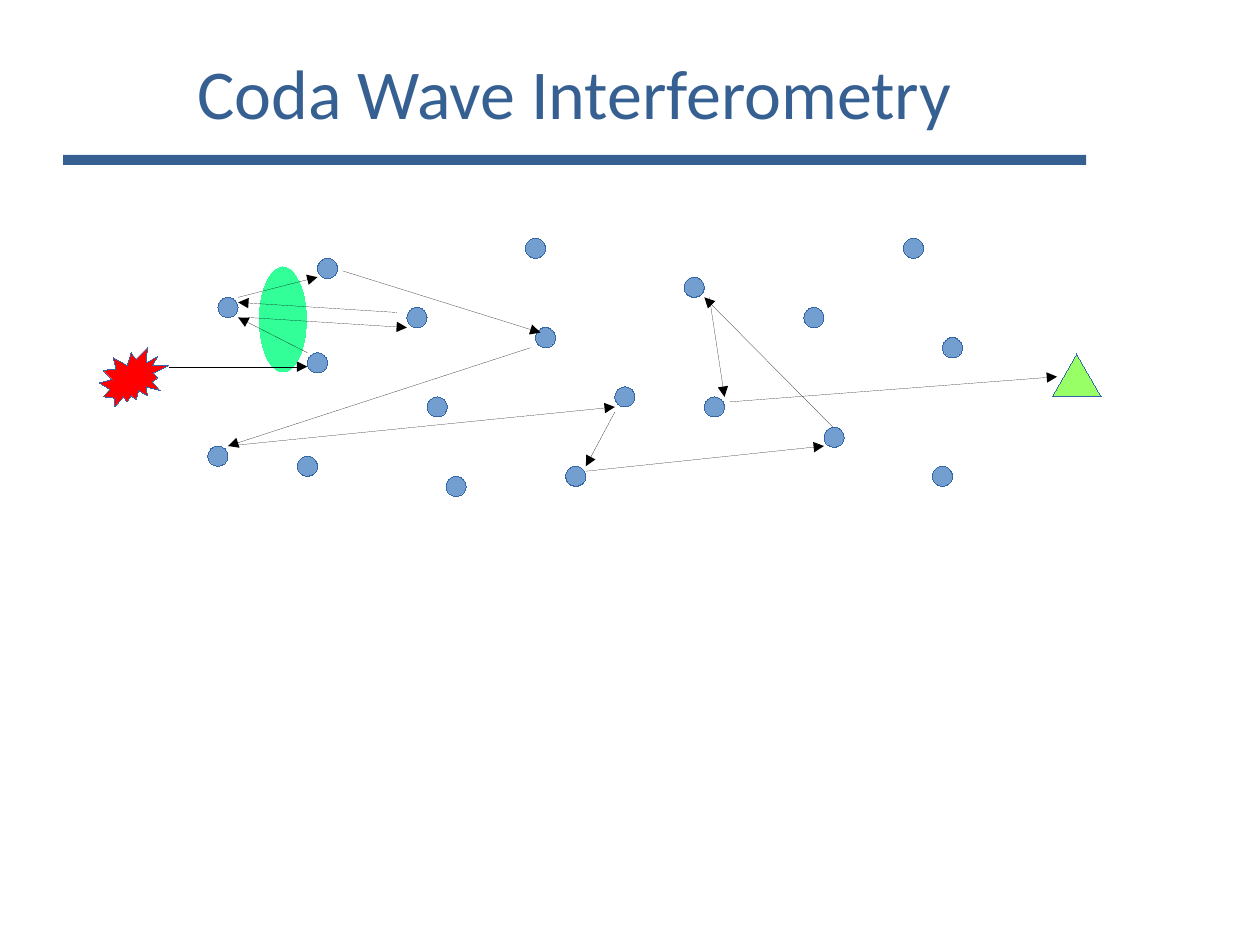
from dataclasses import dataclass

from lxml.etree import SubElement
from pptx import Presentation
from pptx.dml.color import RGBColor
from pptx.enum.shapes import MSO_CONNECTOR, MSO_SHAPE
from pptx.enum.text import MSO_ANCHOR, PP_ALIGN
from pptx.oxml.ns import qn
from pptx.util import Inches, Pt


@dataclass(frozen=True)
class Theme:
    """Colours, font and type size of the slide."""
    heading: RGBColor = RGBColor(0x37, 0x60, 0x92)
    scatterer: RGBColor = RGBColor(0x72, 0x9F, 0xCF)
    outline: RGBColor = RGBColor(0x34, 0x65, 0xA4)
    region: RGBColor = RGBColor(0x33, 0xFF, 0x99)
    source: RGBColor = RGBColor(0xFF, 0x00, 0x00)
    receiver: RGBColor = RGBColor(0x99, 0xFF, 0x66)
    ray: RGBColor = RGBColor(0x00, 0x00, 0x00)
    white: RGBColor = RGBColor(0xFF, 0xFF, 0xFF)
    font: str = "Calibri"
    title_size: Pt = Pt(40)


THEME = Theme()
DOT_SIZE = 0.16

SCATTERERS = [
    (0.86, 1.65), (6.69, 0.79), (5.75, 1.5), (5.59, 0.55), (4.8, 1.26),
    (4.64, 0.31), (3.46, 0.71), (2.6, 1.26), (3.7, 1.81), (2.44, 0.55),
    (1.57, 1.73), (0.94, 0.47), (1.65, 0.91), (1.73, 0.16), (6.61, 1.81),
    (6.38, 0), (2.75, 1.89), (3.38, 0), (4.09, 1.18),
]

RAYS = [
    ((0.55, 1.02), (1.65, 1.02)), ((2.36, 0.59), (1.1, 0.51)),
    ((1.65, 0.91), (1.1, 0.63)), ((1.18, 0.63), (2.44, 0.71)),
    ((1.1, 0.47), (1.73, 0.31)), ((1.93, 0.26), (3.5, 0.75)),
    ((3.42, 0.87), (1.02, 1.65)), ((4.09, 1.38), (3.86, 1.81)),
    ((1.02, 1.65), (4.09, 1.34)), ((3.86, 1.85), (5.75, 1.65)),
    ((5.82, 1.5), (4.8, 0.47)), ((4.84, 0.47), (4.96, 1.26)),
    ((5, 1.3), (7.6, 1.1)),
]

BURST = [
    (0.29, 0.96), (0.25, 0.91), (0.22, 1.01), (0.11, 0.95), (0.13, 1.04),
    (0.03, 1.05), (0.1, 1.12), (0, 1.15), (0.08, 1.2), (0.03, 1.26),
    (0.12, 1.27), (0.12, 1.34), (0.19, 1.26), (0.22, 1.3), (0.25, 1.25),
    (0.29, 1.28), (0.31, 1.21), (0.38, 1.25), (0.37, 1.18), (0.48, 1.21),
    (0.42, 1.14), (0.46, 1.11), (0.43, 1.07), (0.55, 1.01), (0.42, 1.01),
    (0.46, 0.94), (0.37, 0.99), (0.38, 0.87),
]


def remove_style(shape):
    """Drop the theme style, so that lines keep the default width."""
    style = shape._element.find(qn("p:style"))
    if style is not None:
        shape._element.remove(style)


def paint(shape, fill, outline=None):
    """Give a shape a flat fill and an optional outline."""
    remove_style(shape)
    shape.shadow.inherit = False
    shape.fill.solid()
    shape.fill.fore_color.rgb = fill
    if outline is None:
        shape.line.fill.background()
    else:
        shape.line.color.rgb = outline


def add_preset(page, kind, left, top, width, height, fill, outline=None):
    """Add a painted preset shape, measured in inches."""
    shape = page.shapes.add_shape(
        kind, Inches(left), Inches(top), Inches(width), Inches(height))
    paint(shape, fill, outline)


def add_ray(page, start, end):
    """Add a thin arrow between two points in inches."""
    ray = page.shapes.add_connector(
        MSO_CONNECTOR.STRAIGHT, *(Inches(value) for value in (*start, *end)))
    remove_style(ray)
    ray.line.color.rgb = THEME.ray
    SubElement(ray.line._get_or_add_ln(), qn("a:tailEnd"), type="triangle")
    SubElement(ray._element.spPr, qn("a:effectLst"))


def add_header(page, left, top, width, height):
    """Place the centred title with the rule at the foot of its box."""
    rule_height = 0.08
    add_preset(page, MSO_SHAPE.RECTANGLE, left, top + height - rule_height,
               width, rule_height, THEME.heading)
    box = page.shapes.add_textbox(
        Inches(left), Inches(top), Inches(width), Inches(0.85))
    frame = box.text_frame
    frame.word_wrap = True
    frame.vertical_anchor = MSO_ANCHOR.MIDDLE
    para = frame.paragraphs[0]
    para.alignment = PP_ALIGN.CENTER
    span = para.add_run()
    span.text = "Coda Wave Interferometry"
    span.font.name = THEME.font
    span.font.size = THEME.title_size
    span.font.color.rgb = THEME.heading


def add_scattering_field(page, left, top):
    """Place the changed region, scatterers, source, receiver and ray path."""
    def place(point):
        return left + point[0], top + point[1]

    add_preset(page, MSO_SHAPE.OVAL, *place((1.26, 0.22)), 0.39, 0.85,
               THEME.region, THEME.white)
    for point in SCATTERERS:
        add_preset(page, MSO_SHAPE.OVAL, *place(point), DOT_SIZE, DOT_SIZE,
                   THEME.scatterer, THEME.outline)

    corners = [tuple(Inches(value) for value in place(point))
               for point in BURST]
    builder = page.shapes.build_freeform(*corners[0])
    builder.add_line_segments(corners[1:], close=True)
    paint(builder.convert_to_shape(), THEME.source, THEME.outline)

    add_preset(page, MSO_SHAPE.ISOSCELES_TRIANGLE, *place((7.56, 0.92)),
               0.39, 0.34, THEME.receiver, THEME.outline)
    for start, end in RAYS:
        add_ray(page, place(start), place(end))


def main():
    """Build the slide and save the deck."""
    deck = Presentation()
    deck.slide_width, deck.slide_height = Inches(10), Inches(7.5)
    page = deck.slides.add_slide(deck.slide_layouts[6])
    add_header(page, 0.5, 0.3, 8.12, 1.01)
    add_scattering_field(page, 0.79, 1.89)
    deck.save("out.pptx")


if __name__ == "__main__":
    main()
